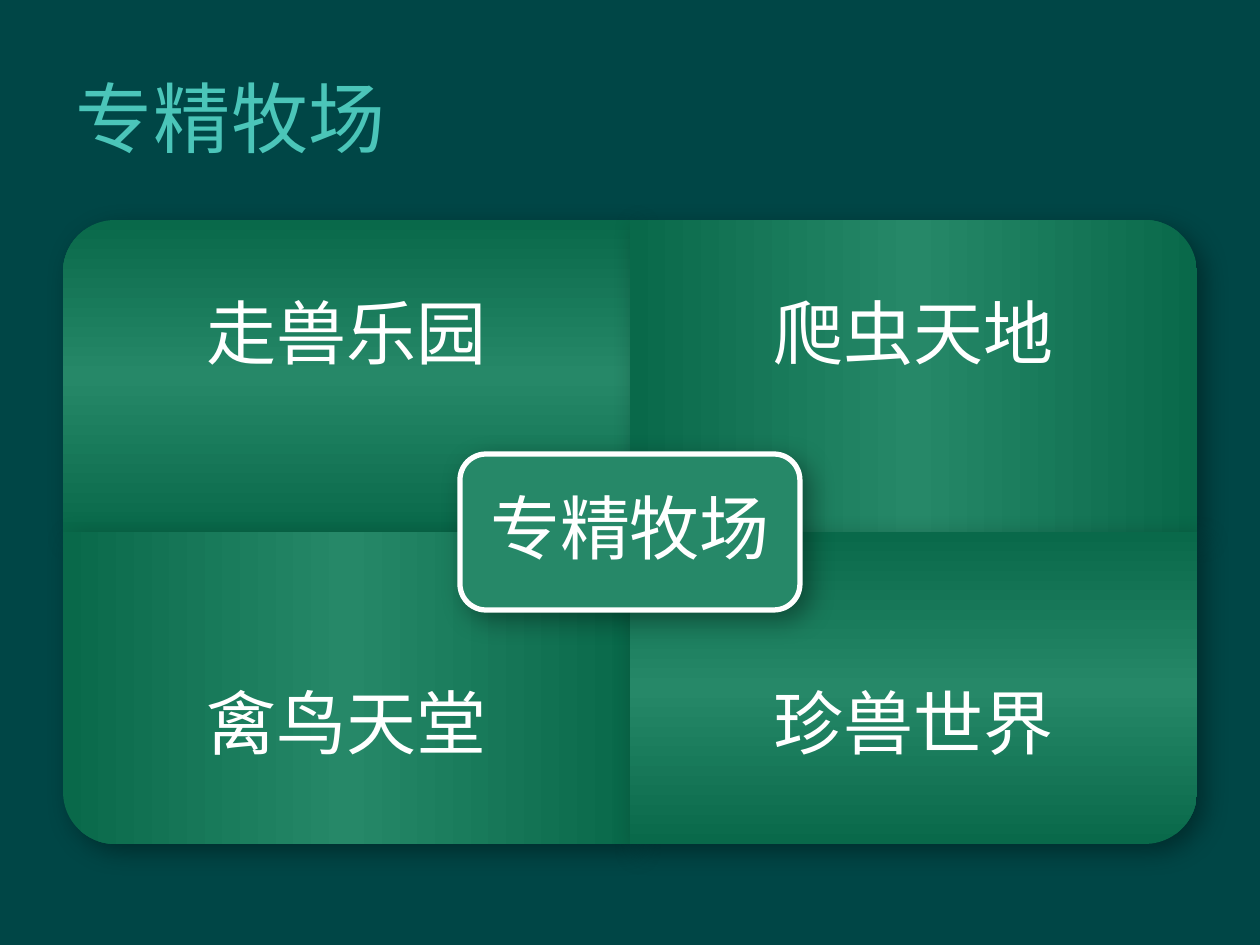
from lxml import etree
from pptx import Presentation
from pptx import util as u
from pptx.dml.color import RGBColor
from pptx.enum import shapes, text
from pptx.oxml import parse_xml
from pptx.oxml.ns import nsdecls, qn

NIGHT = RGBColor(0x00, 0x46, 0x46)
TEAL = RGBColor(0x4B, 0xC5, 0xB9)
DEEP = RGBColor(0x09, 0x69, 0x4A)
GREEN = RGBColor(0x26, 0x88, 0x68)
WHITE = RGBColor(0xFF, 0xFF, 0xFF)

HEAD = {"name": "Arial", "size": u.Pt(44), "color": TEAL}
LABEL = {"name": "Times New Roman", "size": u.Pt(40), "color": WHITE}

# Quarter: label, column, row, turn in degrees
PARTS = [
    ("走兽乐园", 0, 0, 270),
    ("爬虫天地", 1, 0, 0),
    ("禽鸟天堂", 0, 1, 180),
    ("珍兽世界", 1, 1, 90),
]


def px(n):
    return u.Emu(round(n * 914400 / 126))


def place(box):
    return [px(n) for n in box]


def shade(shape):
    """Give the shape a soft shadow to its lower right."""
    shape._element.spPr.append(parse_xml(
        f'<a:effectLst {nsdecls("a")}>'
        '<a:outerShdw blurRad="190500" dist="78740" dir="2700000" '
        'algn="tl" rotWithShape="0"><a:srgbClr val="000000">'
        '<a:alpha val="36000"/></a:srgbClr></a:outerShdw></a:effectLst>'))


def blend(shape):
    """Fill the shape with a deep-green-deep gradient that turns with it."""
    stops = "".join(
        f'<a:gs pos="{pos}"><a:srgbClr val="{tone}"/></a:gs>'
        for pos, tone in ((0, DEEP), (50000, GREEN), (100000, DEEP)))
    shape.fill.background()
    props = shape._element.spPr
    props.replace(props.find(qn("a:noFill")), parse_xml(
        f'<a:gradFill {nsdecls("a")} rotWithShape="1"><a:gsLst>{stops}'
        '</a:gsLst><a:lin ang="0" scaled="0"/></a:gradFill>'))


def write(slide, box, words, style):
    """Add a text box, centred in height, and return it."""
    item = slide.shapes.add_textbox(*place(box))
    frame = item.text_frame
    frame.word_wrap = True
    frame.vertical_anchor = text.MSO_ANCHOR.MIDDLE
    run = frame.paragraphs[0].add_run()
    run.text = words
    for key, val in style.items():
        if key == "color":
            run.font.color.rgb = val
        else:
            setattr(run.font, key, val)
    return item


def label(slide, box, words, inset):
    frame = write(slide, box, words, LABEL).text_frame
    for side in ("left", "top", "right", "bottom"):
        setattr(frame, f"margin_{side}", px(inset))
    para = frame.paragraphs[0]
    para.alignment = text.PP_ALIGN.CENTER
    para.line_spacing = 0.9
    after = etree.SubElement(para._p.get_or_add_pPr(), qn("a:spcAft"))
    etree.SubElement(after, qn("a:spcPct")).set("val", "35000")


def title(slide, box, words):
    item = write(slide, box, words, HEAD)
    run = item.text_frame.paragraphs[0].runs[0]
    run.font._element.set("spc", "50")


def quarter(slide, box, words, row, turn):
    """Add one rounded quarter; its label takes the outer three fourths."""
    x, y, w, h = box
    wide, high = (h, w) if turn % 180 else (w, h)
    spot = (x + (w - wide) / 2, y + (h - high) / 2, wide, high)
    shape = slide.shapes.add_shape(
        shapes.MSO_SHAPE.ROUND_1_RECTANGLE, *place(spot))
    shape.rotation = turn
    blend(shape)
    shape.line.fill.background()
    shade(shape)
    label(slide, (x, y + row * h // 4, w, h * 3 // 4), words, 39)


def core(slide, box, words):
    shape = slide.shapes.add_shape(
        shapes.MSO_SHAPE.ROUNDED_RECTANGLE, *place(box))
    shape.fill.solid()
    shape.fill.fore_color.rgb = GREEN
    shape.line.color.rgb = WHITE
    shape.line.width = u.Pt(3)
    shade(shape)
    x, y, w, h = box
    pad = 8
    label(slide, (x + pad, y + pad, w - 2 * pad, h - 2 * pad), words, 21)


def matrix(slide, box, words):
    """Lay four quarters in the box with a core over their meeting point."""
    x, y, w, h = box
    wide, high = w // 2, h // 2
    for name, col, row, turn in PARTS:
        spot = (x + col * wide, y + row * high, wide, high)
        quarter(slide, spot, name, row, turn)
    cw, ch = w * 3 // 10, h // 4
    core(slide, (x + (w - cw) // 2, y + (h - ch) // 2, cw, ch), words)


def main():
    deck = Presentation()
    deck.slide_width, deck.slide_height = px(1260), px(945)
    slide = deck.slides.add_slide(deck.slide_layouts[6])
    back = slide.background.fill
    back.solid()
    back.fore_color.rgb = NIGHT
    title(slide, (63, 38, 1071, 157), "专精牧场")
    matrix(slide, (63, 220, 1134, 624), "专精牧场")
    deck.save("out.pptx")


if __name__ == "__main__":
    main()
